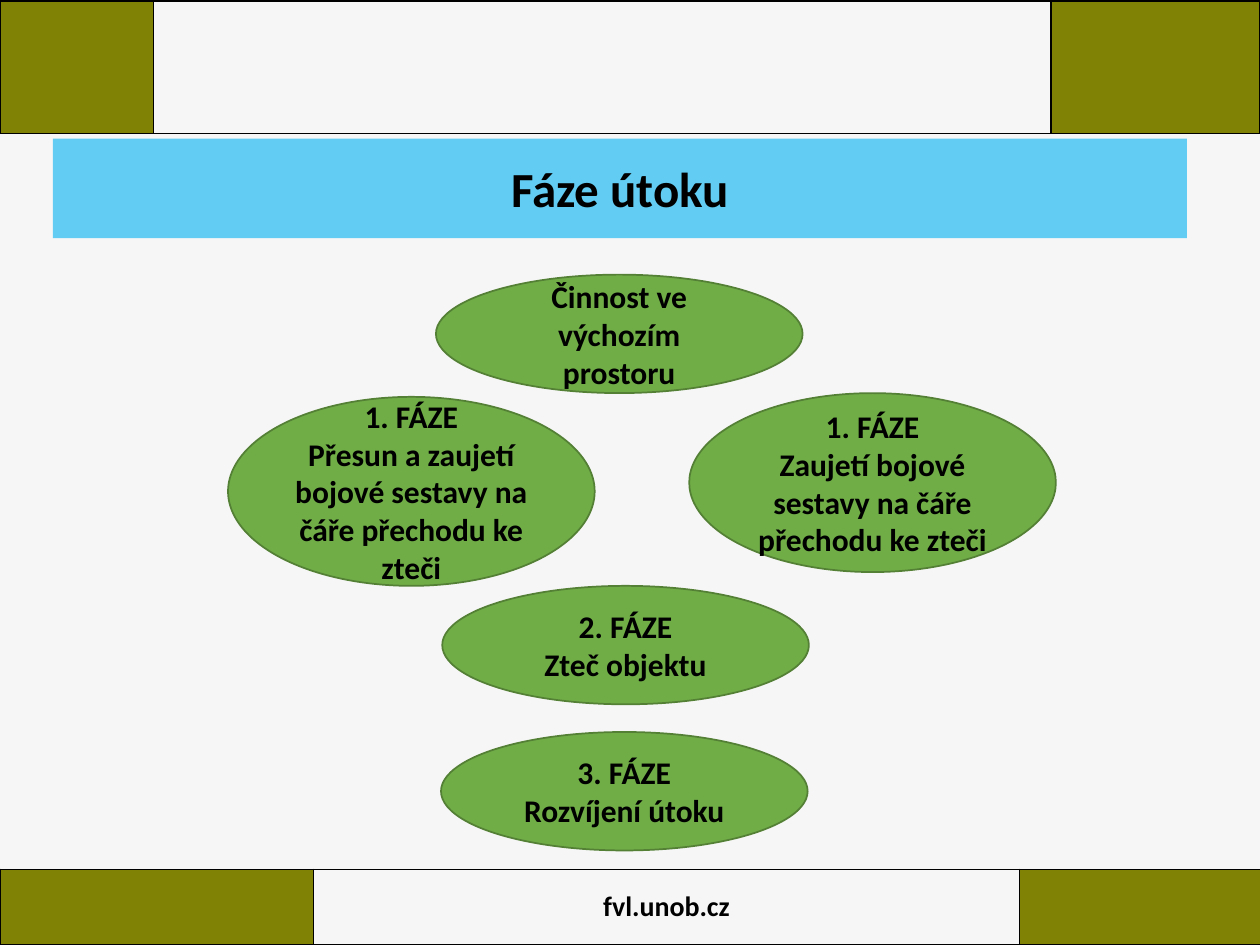
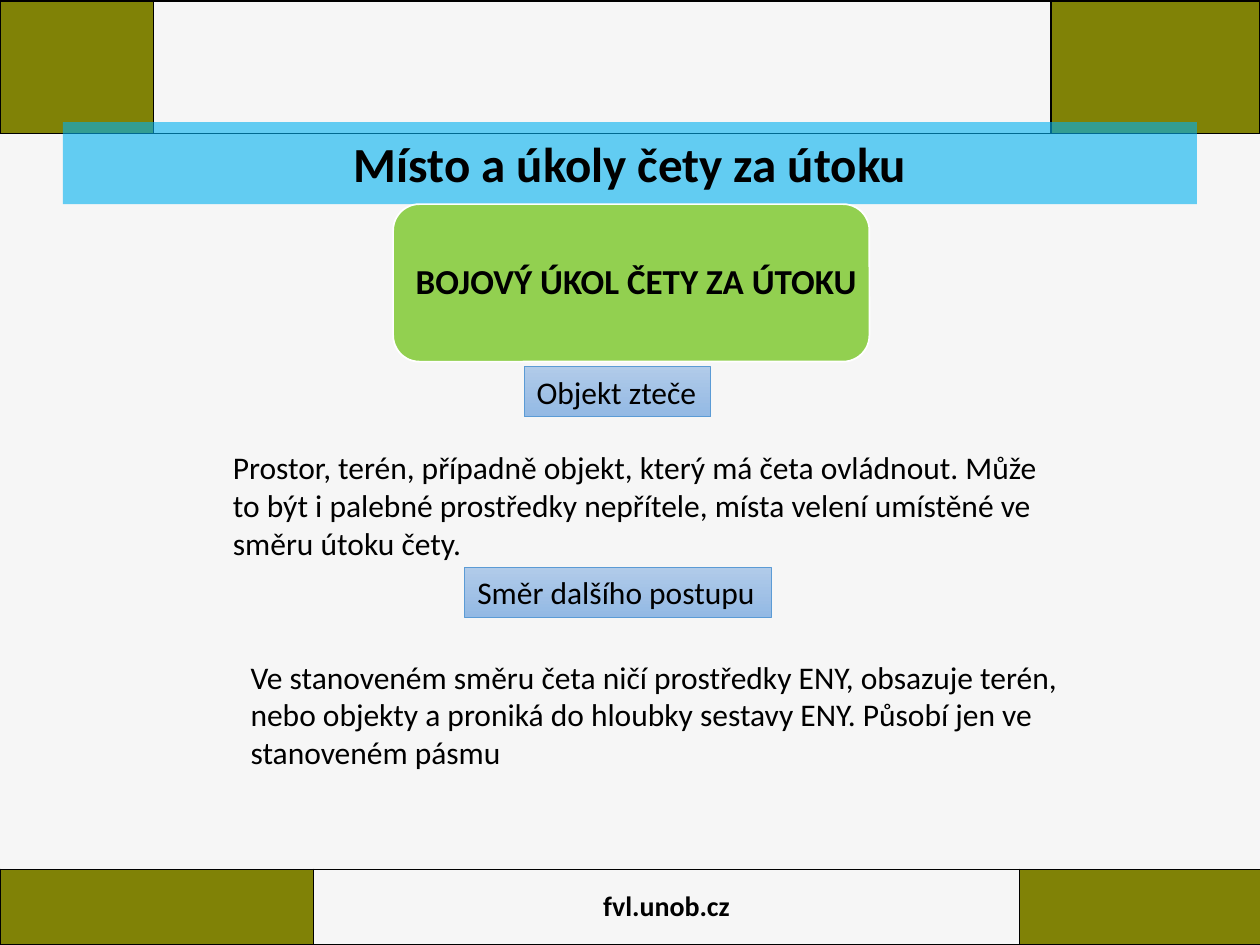
from lxml import etree
from pptx import Presentation
from pptx.dml.color import RGBColor
from pptx.enum import shapes, text
from pptx.oxml import ns
from pptx.util import Inches, Pt

# Shared look
FONT = "Calibri"
PAPER, BLACK, WHITE, OLIVE = "F6F6F6", "000000", "FFFFFF", "808206"
TITLE_BLUE, GREEN, GREEN_EDGE, LIME = "00B0F0", "70AD47", "538035", "92D050"
LABEL_TOP, LABEL_BOTTOM, LABEL_EDGE = "B1CBE9", "93B9E4", "5B9BD5"

# Bands: left, top, height, column widths, middle text
BANDS = [
    (0, 6.9, 0.6, (2.49, 5.6, 1.92), "fvl.unob.cz"),
    (0, 0.01, 1.05, (1.22, 7.12, 1.66), ""),
]

# Slide 1: phases as (left, top, height, lines)
PHASES_TITLE = ("Fáze útoku", (0.42, 1.1, 9, 0.79))
PHASE_WIDTH = 2.91
PHASES = [
    (3.46, 2.18, 0.94, ["Činnost ve výchozím prostoru"]),
    (5.47, 3.12, 1.42, ["1. FÁZE", "Zaujetí bojové sestavy na čáře přechodu ke zteči"]),
    (1.81, 3.15, 1.5, ["1. FÁZE", "Přesun a zaujetí bojové sestavy na čáře přechodu ke zteči"]),
    (3.51, 4.65, 0.94, ["2. FÁZE", "Zteč objektu"]),
    (3.5, 5.81, 0.94, ["3. FÁZE", "Rozvíjení útoku"]),
]

# Slide 2: task heading, then (label, label box, explanation, explanation box)
TASKS_TITLE = ("Místo a úkoly čety za útoku", (0.5, 0.97, 9, 0.65))
HEADING = "BOJOVÝ ÚKOL ČETY ZA ÚTOKU"
HEADING_PANEL, HEADING_BOX = (3.12, 1.62, 3.78, 1.25), (3.2, 1.68, 3.7, 1.13)
TASKS = [
    ("Objekt zteče", (4.16, 2.91, 1.48, 0.4),
     "Prostor, terén, případně objekt, který má četa ovládnout. Může to být i palebné "
     "prostředky nepřítele, místa velení umístěné ve směru útoku čety.",
     (1.75, 3.51, 6.61, 1.01)),
    ("Směr dalšího postupu", (3.69, 4.5, 2.43, 0.4),
     "Ve stanoveném směru četa ničí prostředky ENY, obsazuje terén, nebo objekty a "
     "proniká do hloubky sestavy ENY. Působí jen ve stanoveném pásmu",
     (1.89, 5.17, 6.61, 1.01)),
]


def rgb(hex_colour):
    return RGBColor.from_string(hex_colour)


def write(frame, lines, size=18, bold=False, centred=True, middle=True, wrap=True,
          inset=None, spacing=None):
    """Fill a text frame, one paragraph for each line."""
    frame.word_wrap = wrap
    frame.vertical_anchor = text.MSO_ANCHOR.MIDDLE if middle else text.MSO_ANCHOR.TOP
    if inset is not None:
        frame.margin_left = frame.margin_right = Inches(inset)
        frame.margin_top = frame.margin_bottom = Inches(inset)
    for index, line in enumerate(lines):
        paragraph = frame.add_paragraph() if index else frame.paragraphs[0]
        paragraph.alignment = text.PP_ALIGN.CENTER if centred else text.PP_ALIGN.LEFT
        if spacing:
            paragraph.line_spacing = spacing
        run = paragraph.add_run()
        run.text = line
        run.font.name, run.font.size, run.font.bold = FONT, Pt(size), bold
        run.font.color.rgb = rgb(BLACK)


def add_box(parent, kind, box, fill, edge=None, edge_width=1.0):
    box_shape = parent.add_shape(kind, *map(Inches, box))
    box_shape.shadow.inherit = False
    if isinstance(fill, tuple):
        box_shape.fill.gradient()
        box_shape.fill.gradient_angle = 270
        for stop, colour in zip(box_shape.fill.gradient_stops, fill):
            stop.color.rgb = rgb(colour)
    else:
        box_shape.fill.solid()
        box_shape.fill.fore_color.rgb = rgb(fill)
    if edge:
        box_shape.line.color.rgb = rgb(edge)
        box_shape.line.width = Pt(edge_width)
    else:
        box_shape.line.fill.background()
    return box_shape


def add_text(parent, box, lines, **style):
    write(parent.add_textbox(*map(Inches, box)).text_frame, lines, **style)


def outline_cell(cell):
    properties = cell._tc.get_or_add_tcPr()
    for index, side in enumerate(("lnL", "lnR", "lnT", "lnB")):
        line = etree.Element(ns.qn(f"a:{side}"), w=str(Pt(1)))
        solid = etree.SubElement(line, ns.qn("a:solidFill"))
        etree.SubElement(solid, ns.qn("a:srgbClr"), val=BLACK)
        properties.insert(index, line)


def add_band(slide, left, top, height, widths, label):
    band = slide.shapes.add_table(
        1, len(widths), Inches(left), Inches(top), Inches(sum(widths)), Inches(height)).table
    band.first_row = band.horz_banding = False
    band.rows[0].height = Inches(height)
    for index, width in enumerate(widths):
        band.columns[index].width = Inches(width)
        cell = band.cell(0, index)
        if index == 1:
            cell.fill.background()
        else:
            cell.fill.solid()
            cell.fill.fore_color.rgb = rgb(OLIVE)
        outline_cell(cell)
        if index == 1 and label:
            write(cell.text_frame, [label], size=16, bold=True)
            cell.vertical_anchor = text.MSO_ANCHOR.MIDDLE


def add_slide(prs, title, title_box):
    """Start a slide with the bands and the translucent title bar."""
    slide = prs.slides.add_slide(prs.slide_layouts[6])
    for band in BANDS:
        add_band(slide, *band)
    bar = add_box(slide.shapes, shapes.MSO_SHAPE.RECTANGLE, title_box, TITLE_BLUE)
    colour = bar._element.spPr.find(f"{ns.qn('a:solidFill')}/{ns.qn('a:srgbClr')}")
    etree.SubElement(colour, ns.qn("a:alpha"), val="60000")
    write(bar.text_frame, [title], size=28, bold=True)
    return slide


def build_phases(prs):
    slide = add_slide(prs, *PHASES_TITLE)
    for left, top, height, lines in PHASES:
        phase = add_box(slide.shapes, shapes.MSO_SHAPE.OVAL,
                        (left, top, PHASE_WIDTH, height), GREEN, GREEN_EDGE)
        write(phase.text_frame, lines, bold=True)


def build_tasks(prs):
    slide = add_slide(prs, *TASKS_TITLE)

    # Heading panel with its text
    heading = slide.shapes.add_group_shape().shapes
    add_box(heading, shapes.MSO_SHAPE.ROUNDED_RECTANGLE, HEADING_PANEL, LIME, WHITE)
    add_text(heading, HEADING_BOX, [HEADING], size=20, bold=True, inset=0.08, spacing=0.9)

    # Labels and explanations
    for label, label_box, explanation, explanation_box in TASKS:
        tag = add_box(slide.shapes, shapes.MSO_SHAPE.RECTANGLE, label_box,
                      (LABEL_TOP, LABEL_BOTTOM), LABEL_EDGE, 0.5)
        write(tag.text_frame, [label], centred=False, middle=False, wrap=False)
        tag.text_frame.auto_size = text.MSO_AUTO_SIZE.SHAPE_TO_FIT_TEXT
        add_text(slide.shapes, explanation_box, [explanation], centred=False, middle=False)


def main():
    prs = Presentation()
    prs.slide_width, prs.slide_height = Inches(10), Inches(7.5)
    backdrop = prs.slide_master.background.fill
    backdrop.solid()
    backdrop.fore_color.rgb = rgb(PAPER)
    build_phases(prs)
    build_tasks(prs)
    prs.save("out.pptx")


if __name__ == "__main__":
    main()
